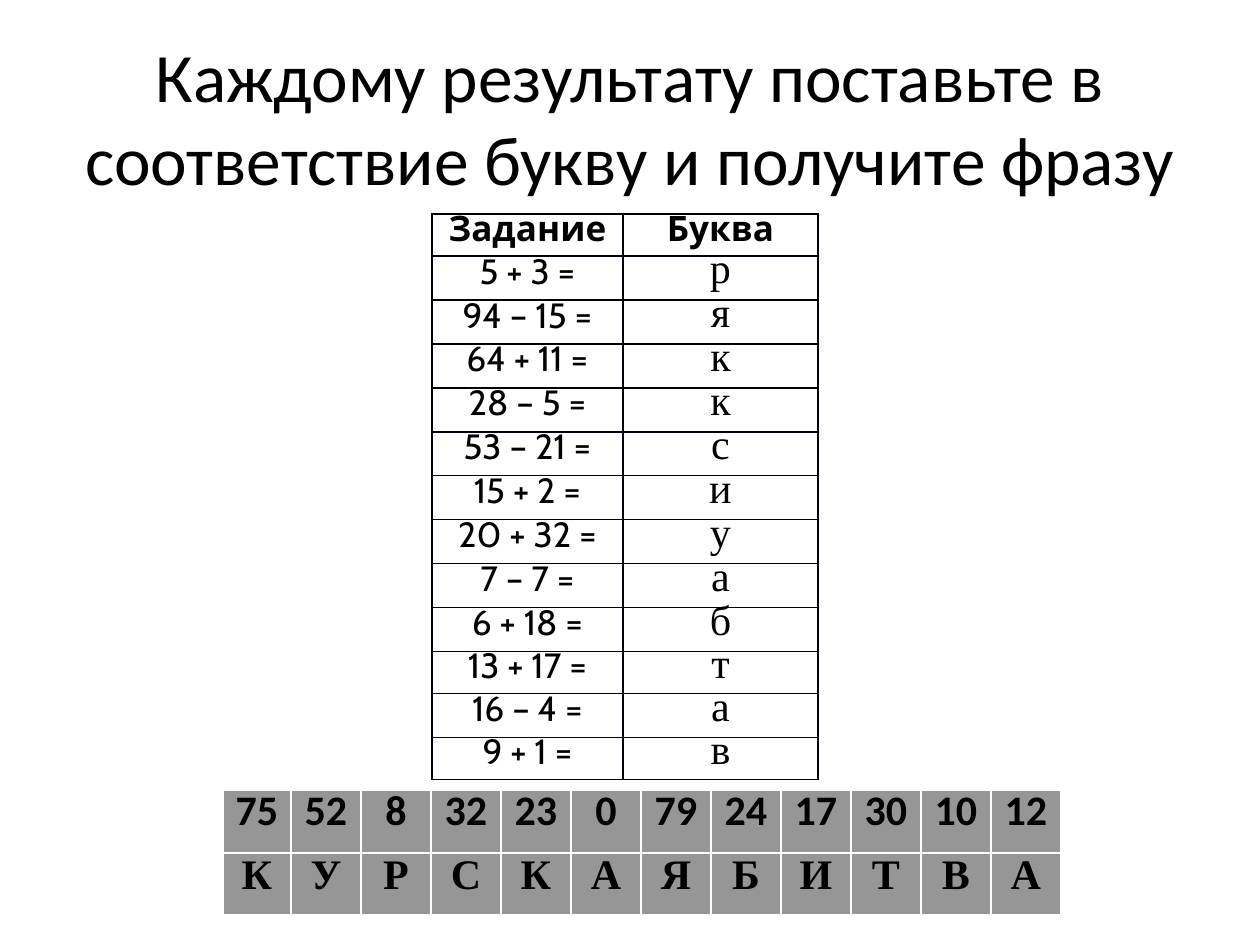
from lxml import etree
from pptx import Presentation
from pptx import util as u
from pptx.dml.color import RGBColor
from pptx.enum import text as t
from pptx.oxml import ns

PX = u.Inches(1) // 126
BLACK = RGBColor(0x00, 0x00, 0x00)
WHITE = RGBColor(0xFF, 0xFF, 0xFF)
INK = RGBColor(0x00, 0x00, 0x0A)
GRAY = RGBColor(0x96, 0x96, 0x96)
SANS, SERIF, TASK_FONT = "Calibri", "Times New Roman", "Cabin"


def write(frame, words, font, size, bold=False, line_spacing=None, space_after=None):
    para = frame.paragraphs[0]
    para.alignment = t.PP_ALIGN.CENTER
    para.line_spacing = line_spacing
    para.space_after = space_after
    span = para.add_run()
    span.text = words
    span.font.name = font
    span.font.size = u.Pt(size)
    span.font.bold = bold
    span.font.color.rgb = BLACK


def add_grid(page, left, top, widths, heights, fill, border):
    """Add an empty table with one fill and one border colour; return it."""
    frame = page.shapes.add_table(len(heights), len(widths), left * PX, top * PX,
                                  sum(widths) * PX, sum(heights) * PX)
    grid = frame.table
    for column, width in zip(grid.columns, widths):
        column.width = width * PX
    for row, height in zip(grid.rows, heights):
        row.height = height * PX
    for cell in grid.iter_cells():
        cell.margin_left = cell.margin_right = 10 * PX
        cell.margin_top = cell.margin_bottom = 0
        cell.vertical_anchor = t.MSO_ANCHOR.MIDDLE
        cell.fill.solid()
        cell.fill.fore_color.rgb = fill
        properties = cell._tc.get_or_add_tcPr()
        for place, side in enumerate(("lnL", "lnR", "lnT", "lnB")):
            line = etree.Element(ns.qn(f"a:{side}"), w=str(u.Pt(1)))
            solid = etree.SubElement(line, ns.qn("a:solidFill"))
            etree.SubElement(solid, ns.qn("a:srgbClr"), val=str(border))
            properties.insert(place, line)
    return grid


deck = Presentation()
deck.slide_width = u.Inches(10)
deck.slide_height = u.Inches(7.5)
page = deck.slides.add_slide(deck.slide_layouts[6])

# Title
box = page.shapes.add_textbox(63 * PX, 38 * PX, 1134 * PX, 157 * PX)
box.text_frame.word_wrap = True
box.text_frame.vertical_anchor = t.MSO_ANCHOR.MIDDLE
write(box.text_frame,
      "Каждому результату поставьте в соответствие букву и получите фразу",
      SANS, 39.6)

# Tasks and their letters
TASKS = [
    ("5 + 3 =", "р"), ("94 – 15 =", "я"), ("64 + 11 =", "к"), ("28 – 5 =", "к"),
    ("53 – 21 =", "с"), ("15 + 2 =", "и"), ("20 + 32 =", "у"), ("7 – 7 =", "а"),
    ("6 + 18 =", "б"), ("13 + 17 =", "т"), ("16 – 4 =", "а"), ("9 + 1 =", "в"),
]
LEADING = u.Pt(17.1)
AFTER = u.Pt(15)
tasks = add_grid(page, 432, 214, [191, 195], [42] + [44] * 9 + [42, 44, 42], WHITE, INK)
for column, heading in enumerate(("Задание", "Буква")):
    write(tasks.cell(0, column).text_frame, heading, TASK_FONT, 20, bold=True,
          line_spacing=LEADING)
for row, (task, letter) in enumerate(TASKS, 1):
    write(tasks.cell(row, 0).text_frame, task, TASK_FONT, 20,
          line_spacing=LEADING, space_after=AFTER)
    write(tasks.cell(row, 1).text_frame, letter, SERIF, 24,
          line_spacing=LEADING, space_after=AFTER)

# Results and the phrase they spell
RESULTS = [75, 52, 8, 32, 23, 0, 79, 24, 17, 30, 10, 12]
PHRASE = "КУРСКАЯБИТВА"
answer = add_grid(page, 223, 790, [68] + [70] * 11, [63, 62], GRAY, WHITE)
for column, (result, letter) in enumerate(zip(RESULTS, PHRASE)):
    write(answer.cell(0, column).text_frame, str(result), SANS, 24, bold=True,
          line_spacing=LEADING)
    write(answer.cell(1, column).text_frame, letter, SERIF, 24, bold=True,
          line_spacing=LEADING)

deck.save("out.pptx")
